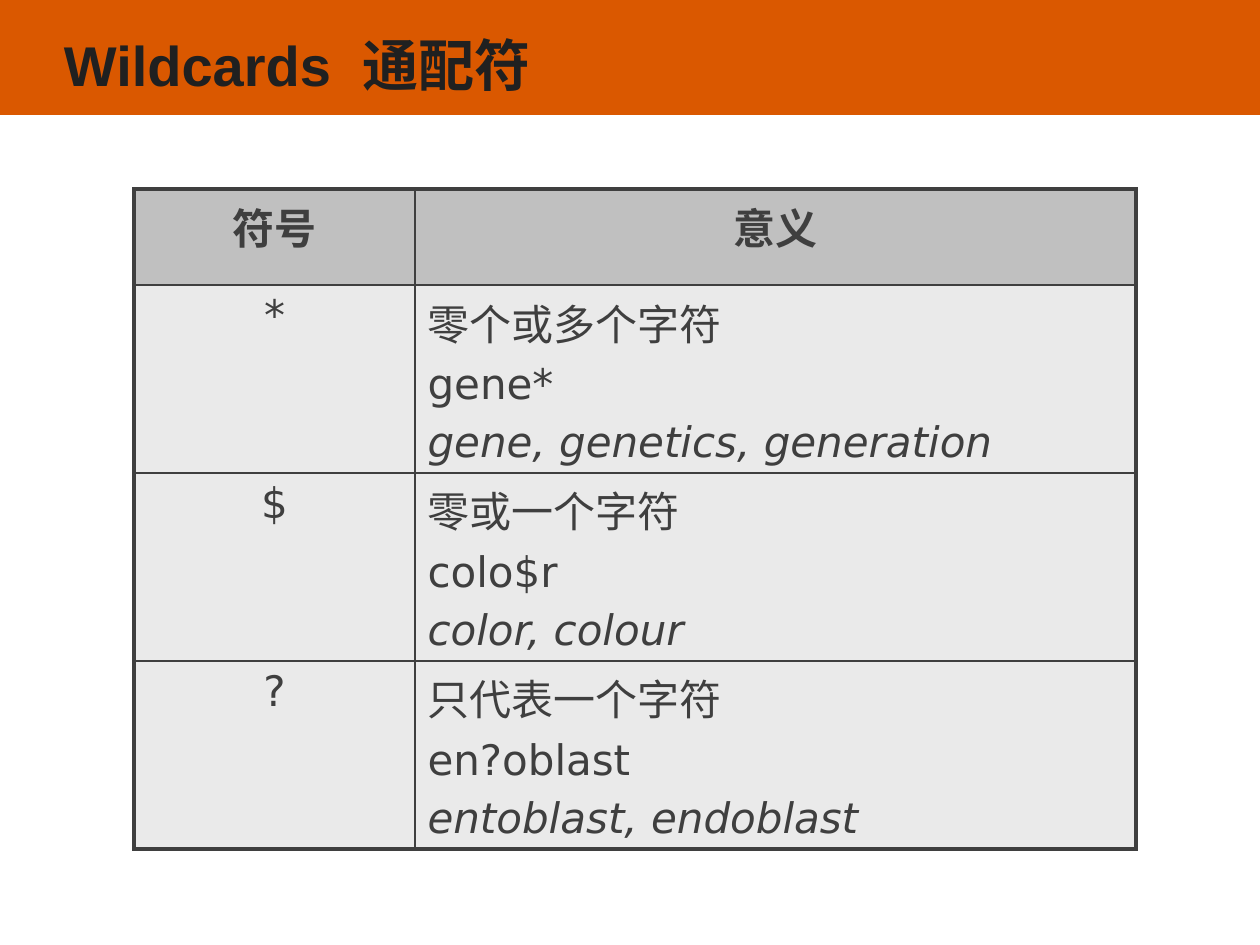
import dataclasses

import pptx
import pptx.dml.color
import pptx.enum.shapes
import pptx.enum.text
import pptx.oxml.ns
import pptx.util
from lxml import etree

ALIGN = pptx.enum.text.PP_ALIGN
ANCHOR = pptx.enum.text.MSO_ANCHOR


@dataclasses.dataclass(frozen=True)
class Theme:
    band: str = "DA5800"
    title: str = "202020"
    ink: str = "3F3F3F"
    header: str = "C0C0C0"
    body: str = "EAEAEA"
    title_font: str = "Arial"
    table_font: str = "DejaVu Sans"
    title_size: int = 32
    table_size: int = 24
    para_gap: int = 5
    inner_line: float = 1
    outer_line: float = 2.25


@dataclasses.dataclass(frozen=True)
class Wildcard:
    symbol: str
    meaning: str
    pattern: str
    matches: str


THEME = Theme()
WILDCARDS = [
    Wildcard("*", "零个或多个字符", "gene*", "gene, genetics, generation"),
    Wildcard("$", "零或一个字符", "colo$r", "color, colour"),
    Wildcard("?", "只代表一个字符", "en?oblast", "entoblast, endoblast"),
]
COL_WIDTHS = [281, 721]
ROW_HEIGHTS = [96] + [188] * len(WILDCARDS)


def px(n: int) -> int:
    return round(n * 914400 / 126)


def rgb(color: str) -> pptx.dml.color.RGBColor:
    return pptx.dml.color.RGBColor.from_string(color)


def add_run(p, text: str, *, font: str, size: int, color: str,
            bold: bool = False, italic: bool = False, spacing: int = 0) -> None:
    """Add a run; spacing is extra letter spacing in points."""
    r = p.add_run()
    r.text = text
    r.font.name = font
    r.font.size = pptx.util.Pt(size)
    r.font.bold = bold
    r.font.italic = italic
    r.font.color.rgb = rgb(color)
    if spacing:
        r._r.get_or_add_rPr().set("spc", str(spacing * 100))


def add_band(slide) -> None:
    sp = slide.shapes.add_shape(
        pptx.enum.shapes.MSO_SHAPE.RECTANGLE, 0, 0, px(1265), px(115))
    sp.shadow.inherit = False
    sp.fill.solid()
    sp.fill.fore_color.rgb = rgb(THEME.band)
    sp.line.fill.background()


def add_title(slide) -> None:
    sp = slide.shapes.add_textbox(px(64), px(15), px(1133), px(98))
    tf = sp.text_frame
    tf.word_wrap = True
    tf.vertical_anchor = ANCHOR.MIDDLE
    tf.margin_left = tf.margin_top = tf.margin_right = tf.margin_bottom = 0
    for text, spacing in [("Wildcards", 0), (" ", 9), ("通配符", 0)]:
        add_run(tf.paragraphs[0], text, font=THEME.title_font,
                size=THEME.title_size, color=THEME.title, bold=True,
                spacing=spacing)


def set_borders(cell, outer: dict[str, bool]) -> None:
    """Draw each side of a cell, heavier where it lies on the table's edge."""
    tcPr = cell._tc.get_or_add_tcPr()
    qn = pptx.oxml.ns.qn
    for side, is_outer in outer.items():
        width = THEME.outer_line if is_outer else THEME.inner_line
        ln = etree.SubElement(tcPr, qn(f"a:ln{side}"), w=str(int(width * 12700)))
        fill = etree.SubElement(ln, qn("a:solidFill"))
        etree.SubElement(fill, qn("a:srgbClr"), val=THEME.ink)


def fill_cell(cell, lines: list[str], *, color: str, align: ALIGN,
              bold: bool = False) -> None:
    """Write the lines into a cell; a third line is set in italics."""
    cell.fill.solid()
    cell.fill.fore_color.rgb = rgb(color)
    tf = cell.text_frame
    for i, line in enumerate(lines):
        p = tf.add_paragraph() if i else tf.paragraphs[0]
        p.alignment = align
        if i:
            p.space_before = pptx.util.Pt(THEME.para_gap)
        add_run(p, line, font=THEME.table_font, size=THEME.table_size,
                color=THEME.ink, bold=bold, italic=i == 2)


def add_wildcard_table(slide) -> None:
    rows = [[["符号"], ["意义"]]]
    rows += [[[w.symbol], [w.meaning, w.pattern, w.matches]] for w in WILDCARDS]
    table = slide.shapes.add_table(
        len(rows), len(COL_WIDTHS), px(134), px(189),
        px(sum(COL_WIDTHS)), px(sum(ROW_HEIGHTS))).table
    for column, width in zip(table.columns, COL_WIDTHS):
        column.width = px(width)
    for row, height in zip(table.rows, ROW_HEIGHTS):
        row.height = px(height)
    for i, row in enumerate(rows):
        for j, lines in enumerate(row):
            cell = table.cell(i, j)
            header = i == 0
            set_borders(cell, {"L": j == 0, "R": j == len(row) - 1,
                               "T": header, "B": i == len(rows) - 1})
            fill_cell(cell, lines, bold=header,
                      color=THEME.header if header else THEME.body,
                      align=ALIGN.CENTER if header or j == 0 else ALIGN.LEFT)


def main() -> None:
    prs = pptx.Presentation()
    prs.slide_width, prs.slide_height = px(1260), px(945)
    slide = prs.slides.add_slide(prs.slide_layouts[6])
    add_band(slide)
    add_title(slide)
    add_wildcard_table(slide)
    prs.save("out.pptx")


if __name__ == "__main__":
    main()
